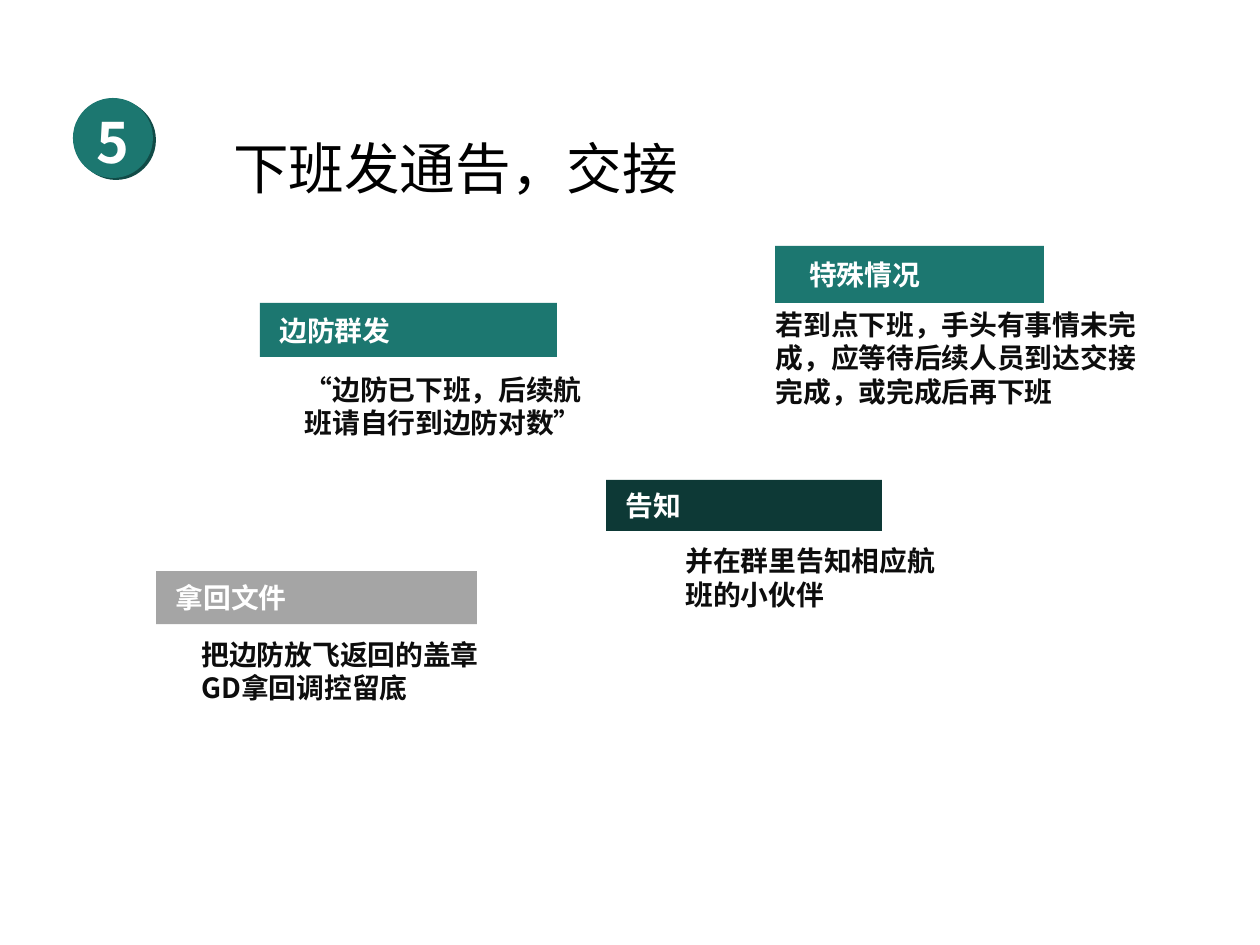
"""Build the slide on the end-of-shift notice and handover."""
from lxml.etree import SubElement
from pptx import Presentation
from pptx.dml.color import RGBColor
from pptx.enum.shapes import MSO_SHAPE as SHAPE
from pptx.enum.text import MSO_ANCHOR as ANCHOR, PP_ALIGN as ALIGN
from pptx.oxml.ns import qn
from pptx.util import Cm, Pt

EMU_PER_PX = 4572
SANS, LATIN = "Noto Sans CJK SC", "Calibri"
GREEN, SHADE, DARK, GRAY = "1C7770", "114B47", "0D3936", "A5A5A5"
WHITE, INK, BLACK = "FFFFFF", "0D0D0D", "000000"

TITLE = ("下班发通告，交接", (213, 124, 596, 120))
NUMBER = "5"
DISCS = [("", SHADE, (76, 100, 80, 80)), (NUMBER, GREEN, (73, 98, 80, 80))]
STEPS = [
    ("边防群发", GREEN, (260, 303, 297, 54), 20,
     "“边防已下班，后续航班请自行到边防对数”", (285, 362, 338, 114)),
    ("拿回文件", GRAY, (156, 571, 321, 53), 20,
     "把边防放飞返回的盖章GD拿回调控留底", (182, 627, 324, 168)),
    ("告知", DARK, (606, 480, 276, 51), 20,
     "并在群里告知相应航班的小伙伴", (666, 533, 308, 142)),
    ("特殊情况", GREEN, (775, 246, 269, 57), 34,
     "若到点下班，手头有事情未完成，应等待后续人员到达交接完成，或完成后再下班",
     (756, 297, 422, 180)),
]


def px(length):
    return length * EMU_PER_PX


def rgb(value):
    return RGBColor.from_string(value)


def write(shape, text, size, face, color, bold=True, align=ALIGN.LEFT,
          anchor=ANCHOR.TOP, insets=(20, 10, 20, 10), spacing=None):
    frame = shape.text_frame
    frame.word_wrap, frame.vertical_anchor = True, anchor
    (frame.margin_left, frame.margin_top,
     frame.margin_right, frame.margin_bottom) = map(px, insets)
    line = frame.paragraphs[0]
    line.text, line.alignment = text, align
    if spacing:
        line.line_spacing = Pt(spacing)
    font = line.font
    font.size, font.name, font.bold = Pt(size), face, bold
    font.color.rgb = rgb(color)
    east_asian = SubElement(line._p.pPr.find(qn("a:defRPr")), qn("a:ea"))
    east_asian.set("typeface", SANS)


def add_filled(slide, preset, box, fill):
    shape = slide.shapes.add_shape(preset, *map(px, box))
    shape.shadow.inherit = False
    shape.fill.solid()
    shape.fill.fore_color.rgb = rgb(fill)
    shape.line.fill.background()
    return shape


def main():
    deck = Presentation()
    deck.slide_width, deck.slide_height = Cm(16), Cm(12)
    slide = deck.slides.add_slide(deck.slide_layouts[5])

    heading, heading_box = TITLE
    title = slide.shapes.title
    title.left, title.top, title.width, title.height = map(px, heading_box)
    write(title, heading, 20, LATIN, BLACK, bold=False)

    for label, fill, box, indent, message, message_box in STEPS:
        banner = add_filled(slide, SHAPE.RECTANGLE, box, fill)
        write(banner, label, 10, LATIN, WHITE, anchor=ANCHOR.MIDDLE,
              insets=(indent, 0, 0, 0))
        note = slide.shapes.add_textbox(*map(px, message_box))
        write(note, message, 10, SANS, INK, spacing=12.2)

    for number, fill, box in DISCS:
        disc = add_filled(slide, SHAPE.OVAL, box, fill)
        if number:
            write(disc, number, 20, SANS, WHITE, align=ALIGN.CENTER,
                  anchor=ANCHOR.MIDDLE, insets=(0, 6, 0, 0))

    deck.save("out.pptx")


if __name__ == "__main__":
    main()
